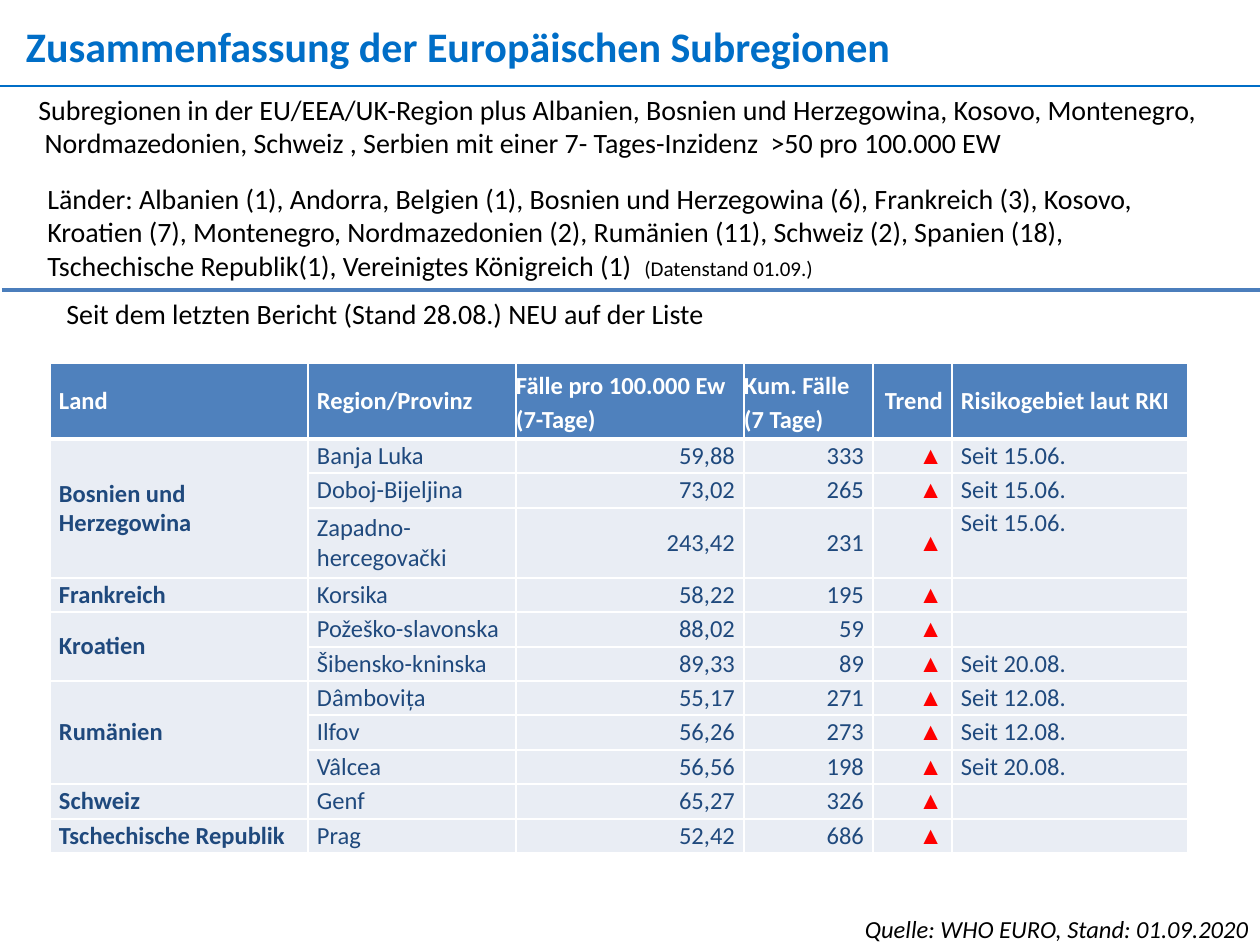
from lxml import etree
from pptx import Presentation
from pptx.dml.color import RGBColor
from pptx.enum.shapes import MSO_CONNECTOR
from pptx.enum.text import MSO_ANCHOR, MSO_AUTO_SIZE, PP_ALIGN
from pptx.oxml.ns import qn
from pptx.util import Emu, Pt

LEFT, RIGHT = PP_ALIGN.LEFT, PP_ALIGN.RIGHT
TOP, MIDDLE = MSO_ANCHOR.TOP, MSO_ANCHOR.MIDDLE
STRAIGHT = MSO_CONNECTOR.STRAIGHT
NO_FIT = MSO_AUTO_SIZE.NONE
SCALE = 914400 / 126


def px(*lengths):
    return [Emu(round(length * SCALE)) for length in lengths]


def add_span(para, text, color, size, **formats):
    span = para.add_run()
    span.text = text
    span.font.color.rgb = RGBColor.from_string(color)
    for name, value in {"name": "Calibri", "size": Pt(size), **formats}.items():
        setattr(span.font, name, value)


deck = Presentation()
deck.slide_width, deck.slide_height = px(1260, 945)
page = deck.slides.add_slide(deck.slide_layouts[5])

title = page.shapes.title
title.left, title.top, title.width, title.height = px(26, 20, 1214, 50)
title_format = {"margin_left": 0, "margin_top": 0, "margin_right": 0, "margin_bottom": 0,
                "vertical_anchor": TOP, "word_wrap": True, "auto_size": NO_FIT}
for name, value in title_format.items():
    setattr(title.text_frame, name, value)
title_para = title.text_frame.paragraphs[0]
title_para.alignment = LEFT
add_span(title_para, "Zusammenfassung der Europäischen Subregionen", "006EC7", 24, bold=True)

rules = [((0, 86, 1260, 86), "006EC7", 1.5), ((2, 290, 1260, 290), "4B7EBC", 1.75)]
for ends, color, width in rules:
    rule = page.shapes.add_connector(STRAIGHT, *px(*ends))
    rule.line.color.rgb = RGBColor.from_string(color)
    rule.line.width = Pt(width)
    etree.SubElement(rule._element.spPr, qn("a:effectLst"))

texts = [
    ((679, 908, 582, 43), RIGHT, [("Quelle: WHO EURO, Stand: 01.09.2020", 14, True)]),
    ((26, 86, 1188, 81), LEFT, [
        ("Subregionen in der EU/EEA/UK-Region plus Albanien, Bosnien und Herzegowina, "
         "Kosovo, Montenegro,  Nordmazedonien, Schweiz , Serbien mit einer "
         "7- Tages-Inzidenz  >50 pro 100.000 EW", 16, False)]),
    ((54, 290, 1002, 47), LEFT, [
        ("Seit dem letzten Bericht (Stand 28.08.) NEU auf der Liste", 16, False)]),
    ((35, 175, 1160, 118), LEFT, [
        ("Länder: Albanien (1), Andorra, Belgien (1), Bosnien und Herzegowina (6), "
         "Frankreich (3), Kosovo, Kroatien (7), Montenegro, Nordmazedonien (2), "
         "Rumänien (11), Schweiz (2), Spanien (18), Tschechische Republik(1), "
         "Vereinigtes Königreich (1)  ", 16, False),
        ("(Datenstand 01.09.)", 12, False)]),
]
for area, alignment, spans in texts:
    box = page.shapes.add_textbox(*px(*area))
    box.text_frame.word_wrap = True
    para = box.text_frame.paragraphs[0]
    para.alignment = alignment
    for text, size, italic in spans:
        add_span(para, text, "000000", size, italic=italic)

headings = ["Land", "Region/Provinz", "Fälle pro 100.000 Ew\n(7-Tage)",
            "Kum. Fälle\n(7 Tage)", "Trend", "Risikogebiet laut RKI"]
countries = [
    ("Bosnien und Herzegowina", [("Banja Luka", "59,88", "333", "Seit 15.06."),
                                 ("Doboj-Bijeljina", "73,02", "265", "Seit 15.06."),
                                 ("Zapadno-hercegovački", "243,42", "231", "Seit 15.06.")]),
    ("Frankreich", [("Korsika", "58,22", "195", "")]),
    ("Kroatien", [("Požeško-slavonska", "88,02", "59", ""),
                  ("Šibensko-kninska", "89,33", "89", "Seit 20.08.")]),
    ("Rumänien", [("Dâmbovița", "55,17", "271", "Seit 12.08."),
                  ("Ilfov", "56,26", "273", "Seit 12.08."),
                  ("Vâlcea", "56,56", "198", "Seit 20.08.")]),
    ("Schweiz", [("Genf", "65,27", "326", "")]),
    ("Tschechische Republik", [("Prag", "52,42", "686", "")]),
]
column_widths = [258, 208, 228, 129, 79, 236]
row_heights = [76, 34, 35, 70, 34, 35, 34, 34, 35, 34, 35, 34]

rows = [headings]
merges = []
for country, regions in countries:
    merges.append((len(rows), len(rows) + len(regions) - 1))
    for number, (region, rate, cases, risk) in enumerate(regions):
        rows.append([country if number == 0 else "", region, rate, cases, "▲", risk])

table_area = px(50, 363, sum(column_widths), sum(row_heights))
table = page.shapes.add_table(len(rows), len(headings), *table_area).table
for column, width in zip(table.columns, px(*column_widths)):
    column.width = width
for row, height in zip(table.rows, px(*row_heights)):
    row.height = height
for first, last in merges:
    if last > first:
        table.cell(first, 0).merge(table.cell(last, 0))

side_margin = px(9)[0]
for row_number, values in enumerate(rows):
    is_header = row_number == 0
    for column_number, value in enumerate(values):
        cell = table.cell(row_number, column_number)
        is_tall = "\n" in value
        is_trend = value == "▲"
        is_top = values[1].startswith("Zapadno") and column_number == 5
        margin = 0 if is_tall else side_margin
        cell_format = {"margin_left": margin, "margin_right": margin, "margin_top": 0,
                       "margin_bottom": 0, "vertical_anchor": TOP if is_top else MIDDLE}
        for name, setting in cell_format.items():
            setattr(cell, name, setting)
        cell.fill.solid()
        cell.fill.fore_color.rgb = RGBColor.from_string("4F81BD" if is_header else "E9EDF4")

        is_right = column_number == 4 or (column_number in (2, 3) and not is_header)
        color = "FFFFFF" if is_header else "FF0000" if is_trend else "1F497D"
        for line_number, text in enumerate(value.split("\n")):
            frame = cell.text_frame
            para = frame.add_paragraph() if line_number else frame.paragraphs[0]
            para.alignment = RIGHT if is_right else LEFT
            if is_tall:
                para.line_spacing = 1.15
            else:
                para.space_before = para.space_after = Pt(2)
            if text:
                add_span(para, text, color, 14, name="Arial" if is_trend else "Calibri",
                         bold=is_header or column_number == 0)
            else:
                etree.SubElement(para._p, qn("a:endParaRPr"), sz="1400")

        thick_side = {0: "lnB", 1: "lnT"}.get(row_number)
        cell_properties = cell._tc.get_or_add_tcPr()
        for position, side in enumerate(["lnL", "lnR", "lnT", "lnB"]):
            border = etree.Element(qn(f"a:{side}"), w=str(Pt(3 if side == thick_side else 1)))
            fill = etree.SubElement(border, qn("a:solidFill"))
            etree.SubElement(fill, qn("a:srgbClr"), val="FFFFFF")
            cell_properties.insert(position, border)

deck.save("out.pptx")
